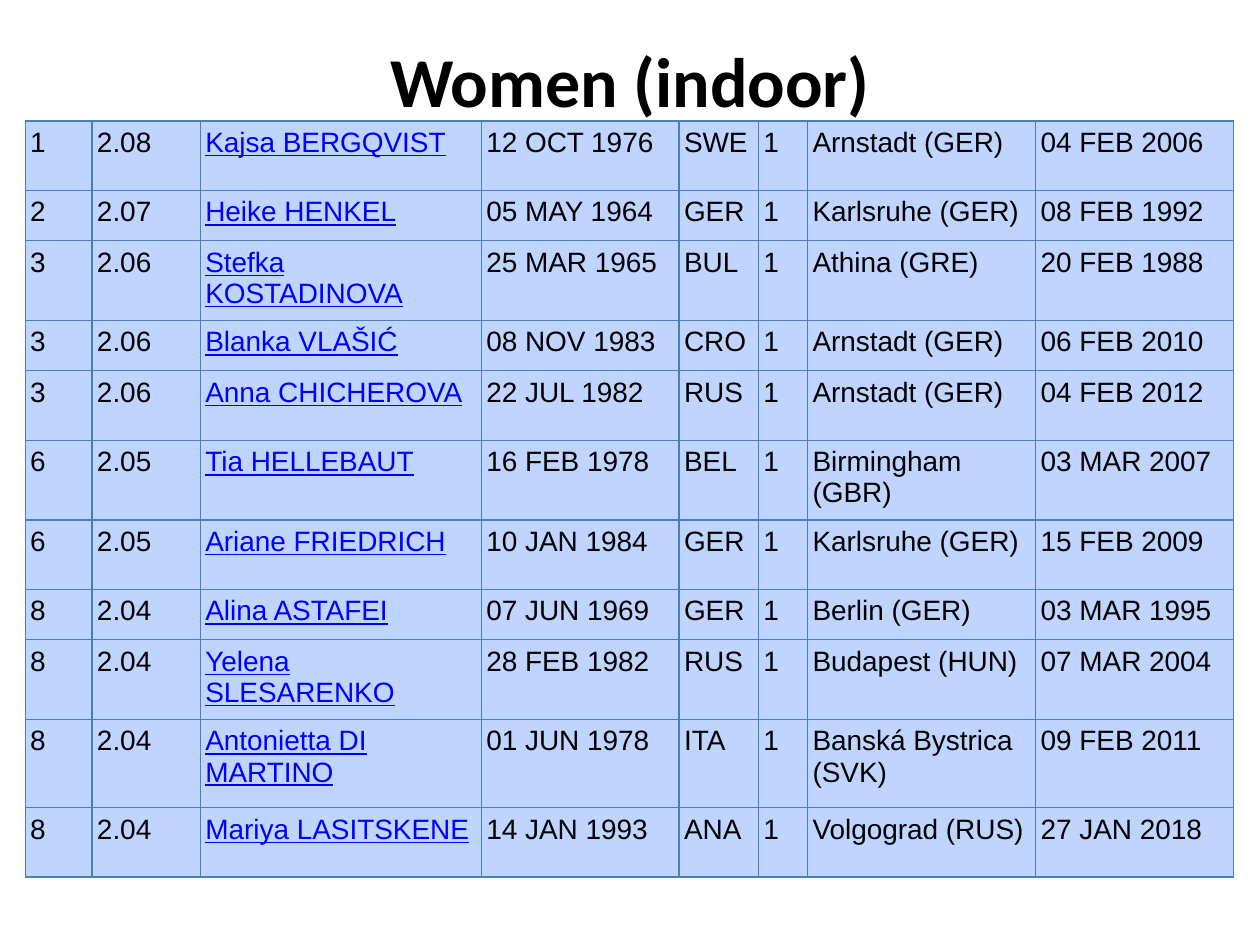
import pptx
import pptx.dml.color
import pptx.enum.text
import pptx.oxml
import pptx.oxml.ns
import pptx.util
from pptx.util import Inches

COLORS = {"text": "000000", "athlete": "0000FF", "cell": "BFD4FF", "border": "4B7EBC"}

COLUMN_WIDTHS = [0.53, 0.86, 2.23, 1.57, 0.63, 0.39, 1.81, 1.57]
ROW_HEIGHTS = [0.55, 0.4, 0.55, 0.4, 0.55, 0.55, 0.55, 0.4, 0.55, 0.7, 0.55]
ATHLETE_COLUMN = 2

# Rank, height, athlete, birth date, country, place, venue, date
RESULTS = [
    ["1", "2.08", "Kajsa BERGQVIST", "12 OCT 1976", "SWE", "1", "Arnstadt (GER)", "04 FEB 2006"],
    ["2", "2.07", "Heike HENKEL", "05 MAY 1964", "GER", "1", "Karlsruhe (GER)", "08 FEB 1992"],
    ["3", "2.06", "Stefka KOSTADINOVA", "25 MAR 1965", "BUL", "1", "Athina (GRE)", "20 FEB 1988"],
    ["3", "2.06", "Blanka VLAŠIĆ", "08 NOV 1983", "CRO", "1", "Arnstadt (GER)", "06 FEB 2010"],
    ["3", "2.06", "Anna CHICHEROVA", "22 JUL 1982", "RUS", "1", "Arnstadt (GER)", "04 FEB 2012"],
    ["6", "2.05", "Tia HELLEBAUT", "16 FEB 1978", "BEL", "1", "Birmingham (GBR)", "03 MAR 2007"],
    ["6", "2.05", "Ariane FRIEDRICH", "10 JAN 1984", "GER", "1", "Karlsruhe (GER)", "15 FEB 2009"],
    ["8", "2.04", "Alina ASTAFEI", "07 JUN 1969", "GER", "1", "Berlin (GER)", "03 MAR 1995"],
    ["8", "2.04", "Yelena SLESARENKO", "28 FEB 1982", "RUS", "1", "Budapest (HUN)", "07 MAR 2004"],
    ["8", "2.04", "Antonietta DI MARTINO", "01 JUN 1978", "ITA", "1", "Banská Bystrica (SVK)",
     "09 FEB 2011"],
    ["8", "2.04", "Mariya LASITSKENE", "14 JAN 1993", "ANA", "1", "Volgograd (RUS)", "27 JAN 2018"],
]


class SlideBuilder:
    """Holds the style and the current slide."""

    title_font, title_size = "Calibri", 40
    body_font, body_size = "Arial", 16
    border_width = 0.75

    def __init__(self, slide):
        self.slide = slide

    def style(self, paragraph, font_name, size, color, bold=False, underline=False):
        font = paragraph.font
        font.name = font_name
        font.size = pptx.util.Pt(size)
        font.bold = bold
        font.underline = underline
        font.color.rgb = pptx.dml.color.RGBColor.from_string(COLORS[color])

    def title(self, text, left, top, width, height):
        box = self.slide.shapes.add_textbox(
            Inches(left), Inches(top), Inches(width), Inches(height))
        frame = box.text_frame
        frame.word_wrap = True
        frame.margin_top = 0
        frame.vertical_anchor = pptx.enum.text.MSO_ANCHOR.TOP
        heading = frame.paragraphs[0]
        heading.text = text
        heading.alignment = pptx.enum.text.PP_ALIGN.CENTER
        self.style(heading, self.title_font, self.title_size, "text", bold=True)

    def borders(self, cell):
        properties = cell._tc.get_or_add_tcPr()
        width = pptx.util.Pt(self.border_width)
        # Border lines must come before the fill
        for position, side in enumerate(("lnL", "lnR", "lnT", "lnB")):
            properties.insert(position, pptx.oxml.parse_xml(
                f'<a:{side} {pptx.oxml.ns.nsdecls("a")} w="{width}"><a:solidFill>'
                f'<a:srgbClr val="{COLORS["border"]}"/></a:solidFill></a:{side}>'))

    def cell(self, cell, text, is_athlete):
        cell.margin_left = cell.margin_right = Inches(0.04)
        cell.margin_top = cell.margin_bottom = Inches(0.05)
        cell.fill.solid()
        cell.fill.fore_color.rgb = pptx.dml.color.RGBColor.from_string(COLORS["cell"])
        self.borders(cell)
        entry = cell.text_frame.paragraphs[0]
        entry.text = text
        self.style(entry, self.body_font, self.body_size,
                   "athlete" if is_athlete else "text", underline=is_athlete)

    def table(self, rows, left, top, widths, heights):
        ranking = self.slide.shapes.add_table(
            len(rows), len(widths), Inches(left), Inches(top),
            Inches(sum(widths)), Inches(sum(heights))).table
        ranking.first_row = ranking.horz_banding = False
        for column, width in zip(ranking.columns, widths):
            column.width = Inches(width)
        for row, height, result in zip(ranking.rows, heights, rows):
            row.height = Inches(height)
            for index, text in enumerate(result):
                self.cell(row.cells[index], text, index == ATHLETE_COLUMN)


def main():
    deck = pptx.Presentation()
    deck.slide_width, deck.slide_height = Inches(10), Inches(7.5)
    builder = SlideBuilder(deck.slides.add_slide(deck.slide_layouts[6]))

    # Heading
    builder.title("Women (indoor)", 0.5, 0.3, 9, 1.25)
    # All-time ranking
    builder.table(RESULTS, 0.2, 0.96, COLUMN_WIDTHS, ROW_HEIGHTS)

    deck.save("out.pptx")


if __name__ == "__main__":
    main()
